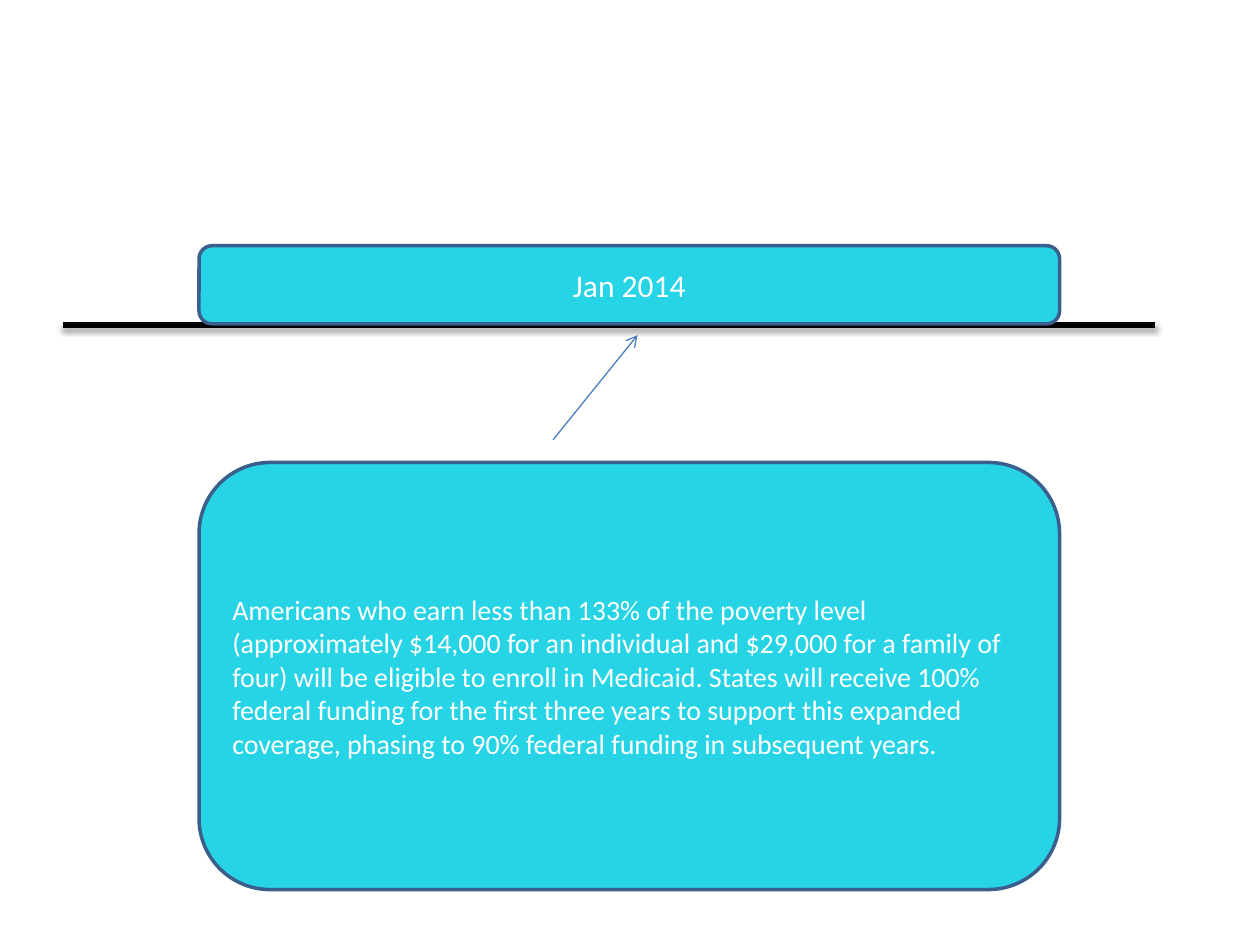
"""Build a timeline slide on the January 2014 Medicaid expansion."""
from lxml.etree import SubElement
from pptx import Presentation
from pptx.dml.color import RGBColor
from pptx.enum.shapes import MSO_CONNECTOR, MSO_SHAPE
from pptx.enum.text import MSO_ANCHOR, PP_ALIGN
from pptx.oxml import parse_xml
from pptx.oxml.ns import nsdecls, qn
from pptx.util import Inches, Pt

BLACK = RGBColor(0x00, 0x00, 0x00)
WHITE = RGBColor(0xFF, 0xFF, 0xFF)
CYAN = RGBColor(0x26, 0xD4, 0xE6)
NAVY = RGBColor(0x3A, 0x5F, 0x8C)
BLUE = RGBColor(0x4B, 0x7E, 0xBC)

DATE = "Jan 2014"
DETAIL = (
    "Americans who earn less than 133% of the poverty level "
    "(approximately $14,000 for an individual and $29,000 for a family of four) "
    "will be eligible to enroll in Medicaid. States will receive 100% federal "
    "funding for the first three years to support this expanded coverage, "
    "phasing to 90% federal funding in subsequent years."
)
BOX_LEFT, BOX_WIDTH = 1.58, 6.83
BOXES = {
    "date": (DATE, 1.95, 0.62, 18, PP_ALIGN.CENTER),
    "detail": (DETAIL, 3.67, 3.39, 16, PP_ALIGN.LEFT),
}
TIMELINE = (0.5, 2.58, 9.17, 2.58)
ARROW = (4.39, 3.49, 5.06, 2.66)
SHADOW = (
    f'<a:outerShdw {nsdecls("a")} blurRad="40000" dist="23000" dir="5400000" '
    'rotWithShape="0"><a:srgbClr val="000000"><a:alpha val="35000"/>'
    "</a:srgbClr></a:outerShdw>"
)


def add_line(s, ends, color, width):
    line = s.shapes.add_connector(MSO_CONNECTOR.STRAIGHT, *map(Inches, ends))
    line.line.color.rgb = color
    line.line.width = Pt(width)
    effects = SubElement(line._element.spPr, qn("a:effectLst"))
    return line, effects


def add_box(s, text, top, height, size, align):
    sp = s.shapes.add_shape(
        MSO_SHAPE.ROUNDED_RECTANGLE,
        *map(Inches, (BOX_LEFT, top, BOX_WIDTH, height)),
    )
    sp.shadow.inherit = False
    sp.fill.solid()
    sp.fill.fore_color.rgb = CYAN
    sp.line.color.rgb = NAVY
    sp.line.width = Pt(2)
    tf = sp.text_frame
    tf.text = text
    tf.word_wrap = True
    tf.vertical_anchor = MSO_ANCHOR.MIDDLE
    p = tf.paragraphs[0]
    p.alignment = align
    font = p.runs[0].font
    font.name, font.size, font.color.rgb = "Calibri", Pt(size), WHITE


def main():
    prs = Presentation()
    prs.slide_width, prs.slide_height = Inches(10), Inches(7.5)
    s = prs.slides.add_slide(prs.slide_layouts[6])

    _, effects = add_line(s, TIMELINE, BLACK, 3)
    effects.append(parse_xml(SHADOW))
    add_box(s, *BOXES["date"])
    arrow, _ = add_line(s, ARROW, BLUE, 0.75)
    SubElement(arrow.line._get_or_add_ln(), qn("a:tailEnd"), type="arrow")
    add_box(s, *BOXES["detail"])

    prs.save("out.pptx")


if __name__ == "__main__":
    main()
